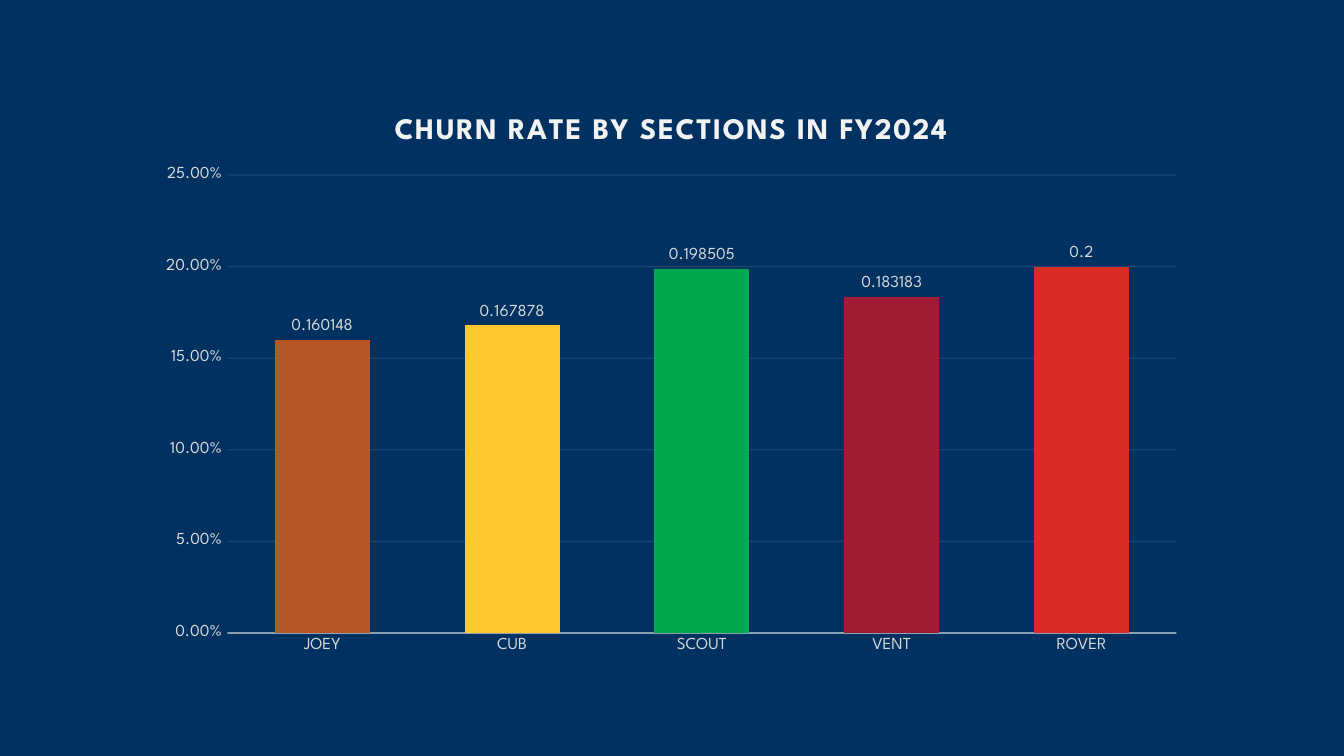
import pptx
import pptx.chart.data
import pptx.dml.color
import pptx.enum.chart
import pptx.oxml
import pptx.oxml.ns
import pptx.util
from pptx.util import Inches

RGBColor = pptx.dml.color.RGBColor
NAVY = RGBColor(0x00, 0x31, 0x60)
OFF_WHITE = RGBColor(0xF2, 0xF2, 0xF2)
LIGHT_GREY = RGBColor(0xD9, 0xD9, 0xD9)
BROWN = RGBColor(0xB7, 0x56, 0x27)
YELLOW = RGBColor(0xFF, 0xC8, 0x2F)
GREEN = RGBColor(0x00, 0xA8, 0x4F)
MAROON = RGBColor(0x9F, 0x1C, 0x34)
RED = RGBColor(0xD8, 0x2B, 0x27)

SECTIONS = [
    ("JOEY", 0.160148, BROWN),
    ("CUB", 0.167878, YELLOW),
    ("SCOUT", 0.198505, GREEN),
    ("VENT", 0.183183, MAROON),
    ("ROVER", 0.2, RED),
]


def set_values(target, values):
    for name, value in values.items():
        setattr(target, name, value)


class ChurnSlide:
    font_name = "League Spartan"
    label_font = {"name": font_name, "size": pptx.util.Pt(9), "bold": False}
    title_font = {"name": font_name, "size": pptx.util.Pt(16), "bold": True}

    def __init__(self, deck):
        self.page = deck.slides.add_slide(deck.slide_layouts[6])
        fill = self.page.background.fill
        fill.solid()
        fill.fore_color.rgb = NAVY

    def style_font(self, font, values, color):
        set_values(font, values)
        font.color.rgb = color

    def style_line(self, line, width, opacity):
        """Draw the line in off-white with the opacity in percent."""
        line.width = pptx.util.Pt(width)
        line.color.rgb = OFF_WHITE
        color = line.fill._xPr.find(".//" + pptx.oxml.ns.qn("a:srgbClr"))
        alpha = pptx.oxml.parse_xml(f"<a:alpha {pptx.oxml.ns.nsdecls('a')}/>")
        alpha.set("val", str(opacity * 1000))
        color.append(alpha)

    def add_column_chart(self, sections, left, top, width, height):
        data = pptx.chart.data.CategoryChartData()
        data.categories = [name for name, rate, color in sections]
        data.add_series("Series 1", [rate for name, rate, color in sections])
        chart = self.page.shapes.add_chart(
            pptx.enum.chart.XL_CHART_TYPE.COLUMN_CLUSTERED,
            left, top, width, height, data).chart
        chart.has_legend = False
        set_values(chart.font, {"name": "Calibri", "size": pptx.util.Pt(10)})
        plot = chart.plots[0]
        set_values(plot, {"gap_width": 100, "overlap": -24,
                          "vary_by_categories": False, "has_data_labels": True})
        for index, (name, rate, color) in enumerate(sections):
            fill = plot.series[0].points[index].format.fill
            fill.solid()
            fill.fore_color.rgb = color
        labels = plot.data_labels
        set_values(labels, {
            "show_value": True, "number_format": "General",
            "number_format_is_linked": False,
            "position": pptx.enum.chart.XL_LABEL_POSITION.OUTSIDE_END})
        self.style_font(labels.font, self.label_font, LIGHT_GREY)
        return chart

    def style_axes(self, chart):
        for axis in (chart.category_axis, chart.value_axis):
            set_values(axis, {
                "major_tick_mark": pptx.enum.chart.XL_TICK_MARK.NONE,
                "minor_tick_mark": pptx.enum.chart.XL_TICK_MARK.NONE})
            self.style_font(axis.tick_labels.font, self.label_font, LIGHT_GREY)
        self.style_line(chart.category_axis.format.line, 1, 54)
        rates = chart.value_axis
        set_values(rates, {"minimum_scale": 0, "maximum_scale": 0.25,
                           "major_unit": 0.05, "has_major_gridlines": True})
        set_values(rates.tick_labels, {"number_format": "0.00%",
                                       "number_format_is_linked": False})
        rates.format.line.fill.background()
        self.style_line(rates.major_gridlines.format.line, 0.75, 10)

    def add_chart_title(self, chart, text):
        title = chart.chart_title
        span = title.text_frame.paragraphs[0].add_run()
        span.text = text
        self.style_font(span.font, self.title_font, OFF_WHITE)
        span.font._element.set("spc", "100")
        title.include_in_layout = False


def main():
    deck = pptx.Presentation()
    width = Inches(10)
    set_values(deck, {"slide_width": width, "slide_height": width * 9 // 16})
    slide = ChurnSlide(deck)
    chart = slide.add_column_chart(
        SECTIONS, Inches(1.08), Inches(0.68), Inches(7.83), Inches(4.27))
    slide.style_axes(chart)
    slide.add_chart_title(chart, "CHURN RATE BY SECTIONS IN FY2024")
    deck.save("out.pptx")


if __name__ == "__main__":
    main()
